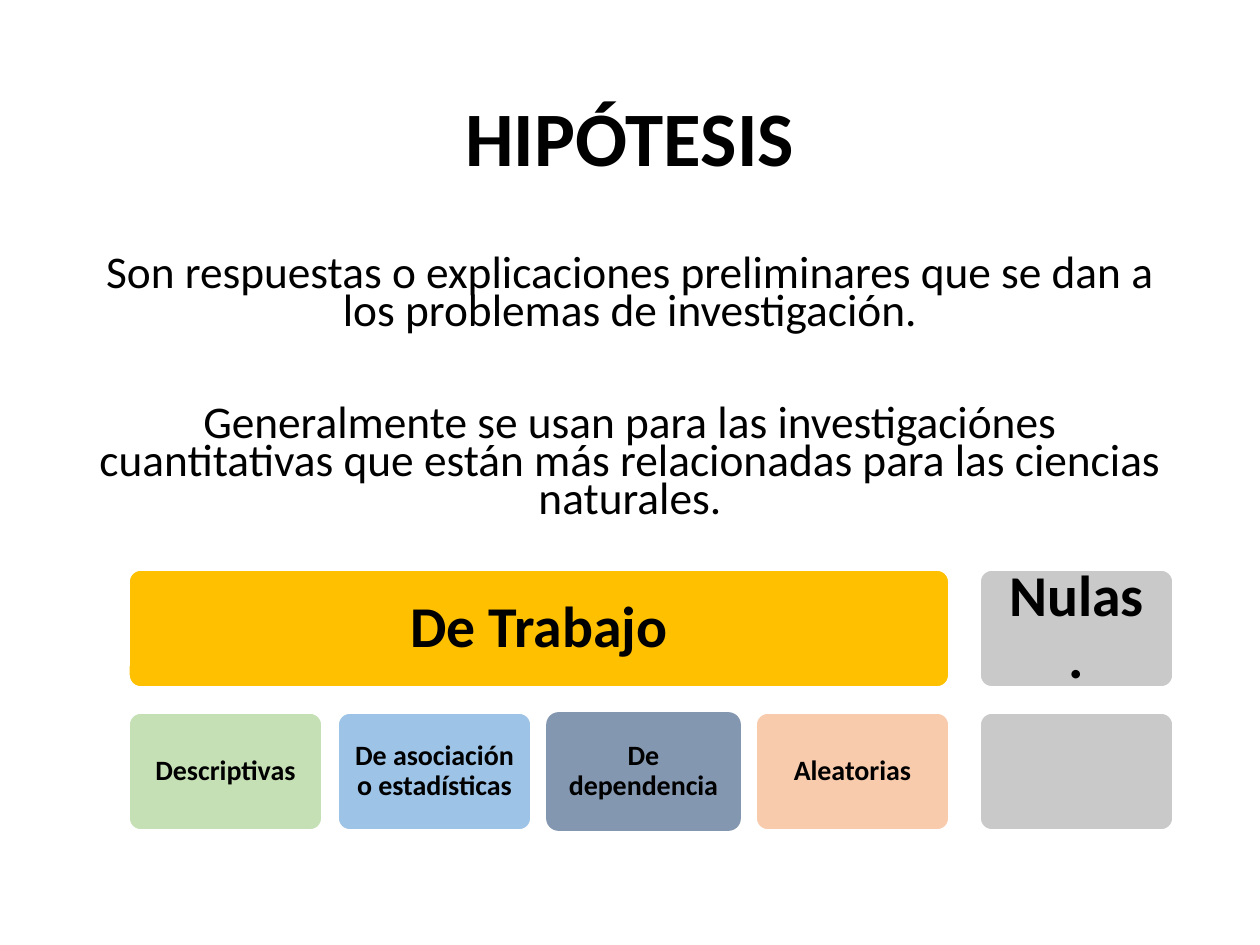
"""Builds the slide on hypotheses and their types."""
from pptx import Presentation
from pptx import util as u
from pptx.dml.color import RGBColor
from pptx.enum import shapes, text

PX = u.Inches(1) / 126
BLACK = RGBColor(0x00, 0x00, 0x00)
WHITE = RGBColor(0xFF, 0xFF, 0xFF)
AMBER = RGBColor(0xFF, 0xC0, 0x00)
GREEN = RGBColor(0xC5, 0xE0, 0xB4)
BLUE = RGBColor(0x9D, 0xC3, 0xE6)
SLATE = RGBColor(0x84, 0x97, 0xB0)
PEACH = RGBColor(0xF8, 0xCB, 0xAD)
GRAY = RGBColor(0xC9, 0xC9, 0xC9)


def px(value):
    return u.Emu(round(value * PX))


class SlideBuilder:
    def __init__(self, slide, font="Calibri"):
        self.slide = slide
        self.font = font

    def add_text(self, paragraph, content, size, bold, spacing):
        paragraph.alignment = text.PP_ALIGN.CENTER
        paragraph.line_spacing = spacing
        run = paragraph.add_run()
        run.text = content
        run.font.name = self.font
        run.font.size = u.Pt(size)
        run.font.bold = bold
        run.font.color.rgb = BLACK

    def text_box(self, box, paragraphs, size, bold=False, spacing=0.9,
                 anchor=text.MSO_ANCHOR.TOP):
        shape = self.slide.shapes.add_textbox(*map(px, box))
        frame = shape.text_frame
        frame.word_wrap = True
        frame.vertical_anchor = anchor
        for index, (content, before) in enumerate(paragraphs):
            paragraph = frame.add_paragraph() if index else frame.paragraphs[0]
            paragraph.space_before = u.Pt(before)
            self.add_text(paragraph, content, size, bold, spacing)

    def card(self, box, content, fill, size, inset, line=WHITE):
        shape = self.slide.shapes.add_shape(
            shapes.MSO_SHAPE.ROUNDED_RECTANGLE, *map(px, box))
        shape.adjustments[0] = 0.1
        shape.shadow.inherit = False
        shape.fill.solid()
        shape.fill.fore_color.rgb = fill
        shape.line.color.rgb = line
        shape.line.width = u.Pt(1)
        if content:
            frame = shape.text_frame
            frame.word_wrap = True
            frame.vertical_anchor = text.MSO_ANCHOR.MIDDLE
            frame.margin_left = frame.margin_right = px(inset)
            frame.margin_top = frame.margin_bottom = px(inset)
            self.add_text(frame.paragraphs[0], content, size, True, 0.9)


def main():
    presentation = Presentation()
    presentation.slide_width = px(1260)
    presentation.slide_height = px(945)
    slide = presentation.slides.add_slide(presentation.slide_layouts[6])
    builder = SlideBuilder(slide)

    builder.text_box((87, 50, 1086, 183), [("HIPÓTESIS", 0)], 44, bold=True,
                     anchor=text.MSO_ANCHOR.MIDDLE)
    builder.text_box((87, 252, 1086, 310), [
        ("Son respuestas o explicaciones preliminares que se dan a los "
         "problemas de investigación.", 10),
        ("Generalmente se usan para las investigaciónes cuantitativas que "
         "están más relacionadas para las ciencias naturales.", 42),
    ], 25.9, spacing=0.7)

    left, pitch, width, height = 129, 209, 193, 117
    upper, lower, null_left = 570, 713, 980
    kinds = [
        ("Descriptivas", GREEN, WHITE),
        ("De asociación o estadísticas", BLUE, WHITE),
        ("De dependencia", SLATE, SLATE),
        ("Aleatorias", PEACH, WHITE),
    ]
    work_width = pitch * (len(kinds) - 1) + width
    builder.card((left, upper, work_width, height), "De Trabajo", AMBER, 33, 18)
    for column, (label, fill, line) in enumerate(kinds):
        builder.card((left + column * pitch, lower, width, height),
                     label, fill, 16, 9, line)
    for top, label in ((upper, "Nulas."), (lower, "")):
        builder.card((null_left, top, width, height), label, GRAY, 33, 18)

    presentation.save("out.pptx")


if __name__ == "__main__":
    main()
